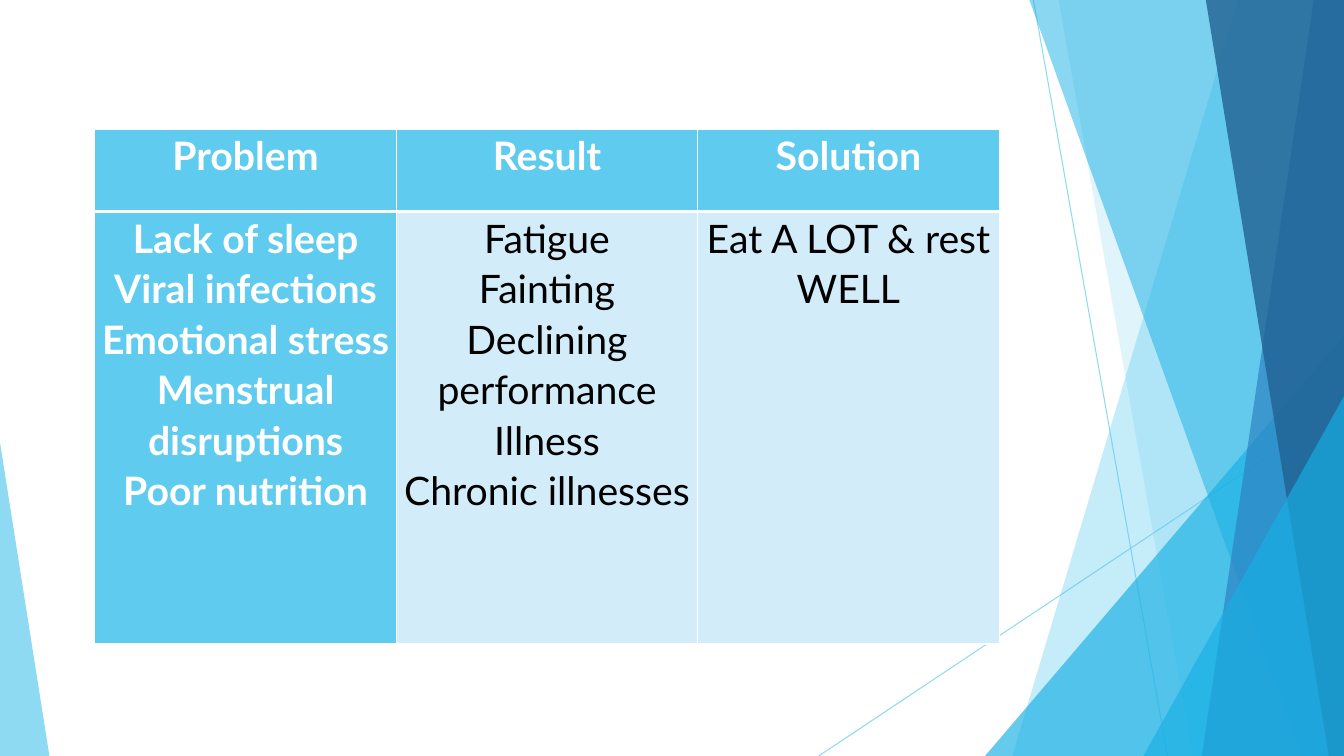
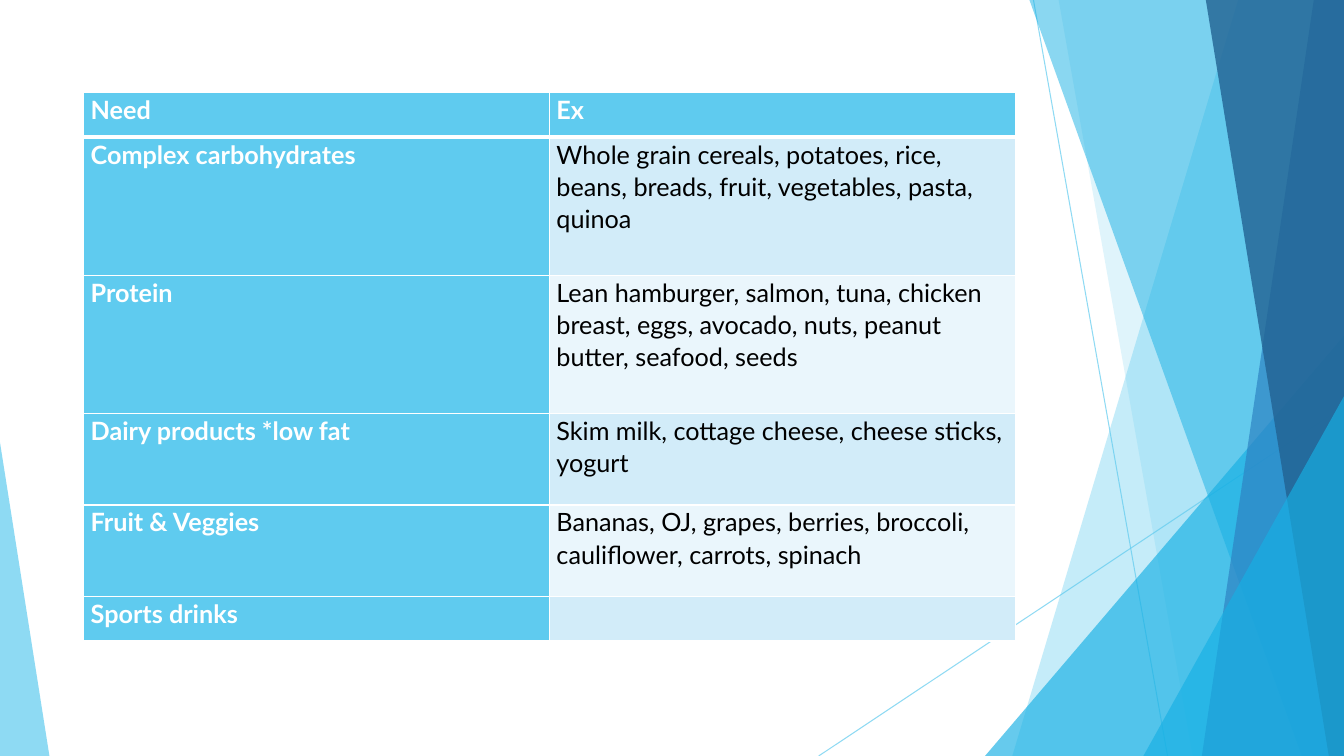
"""Build two slides with athlete-nutrition tables over a shared faceted backdrop."""
from lxml import etree
from pptx import Presentation
from pptx.dml.color import RGBColor
from pptx.enum.shapes import MSO_CONNECTOR, MSO_SHAPE
from pptx.enum.text import PP_ALIGN
from pptx.oxml.ns import qn
from pptx.util import Inches, Pt

STRAIGHT = MSO_CONNECTOR.STRAIGHT
TRIANGLE = MSO_SHAPE.ISOSCELES_TRIANGLE
LEFT, CENTER = PP_ALIGN.LEFT, PP_ALIGN.CENTER
WIDTH, HEIGHT = 13.33, 7.5
FONT = "Lato"
COLORS = {
    "sky": "5FCBEF",
    "cyan": "17B0E4",
    "blue": "2E83C3",
    "navy": "226292",
    "band": "D2ECF9",
    "pale": "EAF6FC",
    "white": "FFFFFF",
    "black": "000000",
}

RAYS = [(10.25, 0, 11.58, HEIGHT), (WIDTH, 4.03, 8.12, HEIGHT)]

# kind, geometry, colour, opacity
FACETS = [
    ("panel", (12.28, 10.04), "sky", 36),
    ("panel", (10.5, 11.83), "sky", 20),
    ("triangle", (9.77, 3.33, 3.56, 1), "cyan", 66),
    ("panel", (10.21, 12.91), "cyan", 50),
    ("panel", (13.03, 11.92), "blue", 70),
    ("panel", (11.96, 13.18), "navy", 80),
    ("triangle", (11.34, 3.93, 1.99, 1), "cyan", 66),
    ("triangle", (0, 4.39, 0.49, 0), "sky", 70),
]

TABLES = [
    {
        "at": (0.94, 1.28), "column": 2.99, "heights": [0.82, 4.29],
        "size": 28, "align": CENTER,
        "rows": [
            ["Problem", "Result", "Solution"],
            [
                "Lack of sleep\nViral infections\nEmotional stress\n"
                "Menstrual disruptions\nPoor nutrition",
                "Fatigue\nFainting\nDeclining performance\nIllness\nChronic illnesses",
                "Eat A LOT & rest WELL",
            ],
        ],
    },
    {
        "at": (0.83, 0.92), "column": 4.62,
        "heights": [0.44, 1.37, 1.37, 0.91, 0.91, 0.44],
        "size": 18, "align": LEFT,
        "rows": [
            ["Need", "Ex"],
            ["Complex carbohydrates",
             "Whole grain cereals, potatoes, rice, beans, breads, fruit, "
             "vegetables, pasta, quinoa"],
            ["Protein",
             "Lean hamburger, salmon, tuna, chicken breast, eggs, avocado, nuts, "
             "peanut butter, seafood, seeds"],
            ["Dairy products *low fat",
             "Skim milk, cottage cheese, cheese sticks, yogurt"],
            ["Fruit & Veggies",
             "Bananas, OJ, grapes, berries, broccoli, cauliflower, carrots, spinach"],
            ["Sports drinks", ""],
        ],
    },
]


def paint(fill, color, opacity=100):
    fill.solid()
    fill.fore_color.rgb = RGBColor.from_string(COLORS[color])
    if opacity < 100:
        tone = fill._xPr.find(qn("a:solidFill"))[0]
        etree.SubElement(tone, qn("a:alpha"), val=str(opacity * 1000))


def add_border(cell, side, points):
    properties = cell._tc.get_or_add_tcPr()
    line = etree.SubElement(properties, qn(f"a:ln{side}"), w=str(Pt(points)))
    solid = etree.SubElement(line, qn("a:solidFill"))
    etree.SubElement(solid, qn("a:srgbClr"), val=COLORS["white"])


deck = Presentation()
deck.slide_width, deck.slide_height = Inches(WIDTH), Inches(HEIGHT)

for content in TABLES:
    page = deck.slides.add_slide(deck.slide_layouts[6])

    for ends in RAYS:
        ray = page.shapes.add_connector(STRAIGHT, *map(Inches, ends))
        ray.line.width = Pt(0.75)
        paint(ray.line.fill, "sky", 70)
        etree.SubElement(ray._element.spPr, qn("a:effectLst"))

    for kind, geometry, color, opacity in FACETS:
        if kind == "panel":
            top_x, bottom_x = geometry
            outline = page.shapes.build_freeform(Inches(top_x), 0, scale=1.0)
            corners = [(WIDTH, 0), (WIDTH, HEIGHT), (bottom_x, HEIGHT)]
            outline.add_line_segments([(Inches(x), Inches(y)) for x, y in corners])
            facet = outline.convert_to_shape()
        else:
            left, top, width, apex = geometry
            facet = page.shapes.add_shape(
                TRIANGLE, Inches(left), Inches(top), Inches(width), Inches(HEIGHT - top))
            facet.adjustments[0] = apex
        facet.shadow.inherit = False
        facet.line.fill.background()
        paint(facet.fill, color, opacity)

    rows, heights = content["rows"], content["heights"]
    columns = len(rows[0])
    left, top = content["at"]
    table = page.shapes.add_table(
        len(rows), columns, Inches(left), Inches(top),
        Inches(content["column"] * columns), Inches(sum(heights))).table
    table.first_col = True
    for column in table.columns:
        column.width = Inches(content["column"])

    for r, texts in enumerate(rows):
        table.rows[r].height = Inches(heights[r])
        for c, text in enumerate(texts):
            cell = table.cell(r, c)
            heading = r == 0 or c == 0
            cell.margin_left = cell.margin_right = Inches(0.07)
            cell.margin_top = cell.margin_bottom = 0
            for side in "LRTB":
                under_header = (r, side) in ((0, "B"), (1, "T"))
                add_border(cell, side, 3 if under_header else 1)
            paint(cell.fill, "sky" if heading else "band" if r % 2 else "pale")
            cell.text = text
            for para in cell.text_frame.paragraphs:
                para.alignment = content["align"]
                para.line_spacing = 1.07
                para.font.name = FONT
                para.font.size = Pt(content["size"])
                para.font.bold = heading
                para.font.color.rgb = RGBColor.from_string(
                    COLORS["white" if heading else "black"])

deck.save("out.pptx")
